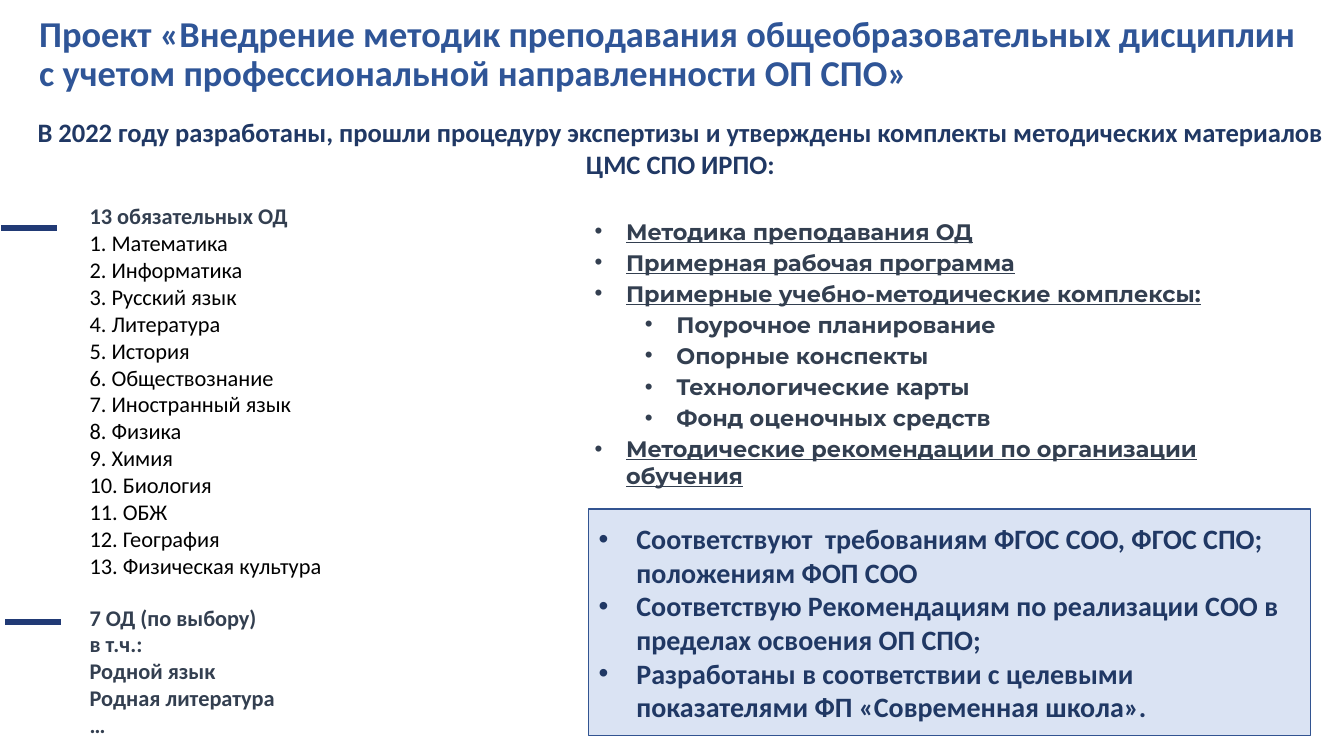
from lxml import etree
from pptx import Presentation
from pptx.dml.color import RGBColor
from pptx.enum.shapes import MSO_CONNECTOR, MSO_SHAPE
from pptx.enum.text import MSO_ANCHOR, PP_ALIGN
from pptx.oxml.ns import qn
from pptx.util import Pt

LEFT, CENTER = PP_ALIGN.LEFT, PP_ALIGN.CENTER
TOP, MIDDLE = MSO_ANCHOR.TOP, MSO_ANCHOR.MIDDLE
RECT, STRAIGHT = MSO_SHAPE.RECTANGLE, MSO_CONNECTOR.STRAIGHT

NAVY, SLATE, BLUE, BLACK = "203864", "333F50", "2F5597", "000000"

TITLE = ("Проект «Внедрение методик преподавания общеобразовательных дисциплин "
         "с учетом профессиональной направленности ОП СПО»")
LEAD = ("В 2022 году разработаны, прошли процедуру экспертизы и утверждены "
        "комплекты методических материалов ЦМС СПО ИРПО:")
SUBJECTS = ["Математика", "Информатика", "Русский язык", "Литература", "История",
            "Обществознание", "Иностранный язык", "Физика", "Химия", "Биология",
            "ОБЖ", "География", "Физическая культура"]
ELECTIVES = ["7 ОД (по выбору)", "в т.ч.:", "Родной язык", "Родная литература", "…"]
# (level, text)
MATERIALS = [
    (0, "Методика преподавания ОД"),
    (0, "Примерная рабочая программа"),
    (0, "Примерные учебно-методические комплексы:"),
    (1, "Поурочное планирование"),
    (1, "Опорные конспекты"),
    (1, "Технологические карты"),
    (1, "Фонд оценочных средств"),
    (0, "Методические рекомендации по организации обучения"),
]
COMPLIANCE = [
    "Соответствуют  требованиям ФГОС СОО, ФГОС СПО; положениям ФОП СОО",
    "Соответствую Рекомендациям по реализации СОО в пределах освоения ОП СПО;",
    "Разработаны в соответствии с целевыми показателями ФП «Современная школа».",
]


def rgb(color):
    return RGBColor.from_string(color)


def add_text_box(s, left, top, width, height):
    sp = s.shapes.add_textbox(Pt(left), Pt(top), Pt(width), Pt(height))
    sp.text_frame.word_wrap = True
    return sp.text_frame


def add_paragraph(tf, text, size, color, bold=True, font="Calibri",
                  underline=False, align=LEFT):
    first = tf.paragraphs[0]
    p = tf.add_paragraph() if first.runs else first
    p.alignment = align
    r = p.add_run()
    r.text = text
    r.font.name, r.font.size = font, Pt(size)
    r.font.bold, r.font.underline = bold, underline
    r.font.color.rgb = rgb(color)
    return p


def add_bullet(p, margin, hanging):
    pPr = p._p.get_or_add_pPr()
    pPr.set("marL", str(Pt(margin)))
    pPr.set("indent", str(-Pt(hanging)))
    etree.SubElement(pPr, qn("a:buFont")).set("typeface", "Arial")
    etree.SubElement(pPr, qn("a:buChar")).set("char", "•")


def add_dash(s, left, y):
    line = s.shapes.add_connector(STRAIGHT, Pt(left), Pt(y), Pt(left + 40), Pt(y))
    line.line.color.rgb = rgb("213A75")
    line.line.width = Pt(4.5)
    etree.SubElement(line._element.spPr, qn("a:effectLst"))


def add_panel(s, left, top, width, height):
    sp = s.shapes.add_shape(RECT, Pt(left), Pt(top), Pt(width), Pt(height))
    sp.shadow.inherit = False
    sp.fill.solid()
    sp.fill.fore_color.rgb = rgb("DAE3F3")
    sp.line.color.rgb = rgb("325491")
    sp.line.width = Pt(1)
    tf = sp.text_frame
    tf.word_wrap = True
    tf.vertical_anchor = MIDDLE
    return tf


def main():
    prs = Presentation()
    prs.slide_width, prs.slide_height = Pt(960), Pt(540)
    s = prs.slides.add_slide(prs.slide_layouts[6])

    # Title and lead sentence
    tf = add_text_box(s, 20.9, 7.9, 923, 63.4)
    tf.vertical_anchor = TOP
    add_paragraph(tf, TITLE, 26, BLUE).line_spacing = 0.9
    tf = add_text_box(s, 12.2, 79.2, 947.5, 53.3)
    add_paragraph(tf, LEAD, 19, NAVY, align=CENTER)

    # Compulsory subjects
    tf = add_text_box(s, 56.9, 141.1, 271.4, 278.6)
    add_paragraph(tf, f"{len(SUBJECTS)} обязательных ОД", 16, SLATE)
    for number, subject in enumerate(SUBJECTS, 1):
        add_paragraph(tf, f"{number}. {subject}", 16, BLACK, bold=False)

    # Elective subjects
    tf = add_text_box(s, 56.9, 427.7, 211.7, 104.4)
    for text in ELECTIVES:
        add_paragraph(tf, text, 16, SLATE)

    # Dashes beside the two subject lists
    add_dash(s, 0.7, 162.7)
    add_dash(s, 3.6, 444.2)

    # Teaching materials
    tf = add_text_box(s, 417.6, 151.9, 526.3, 203)
    for level, text in MATERIALS:
        p = add_paragraph(tf, text, 16, SLATE, font="Montserrat",
                          underline=level == 0)
        p.level = level
        p.space_after = Pt(3)
        add_bullet(p, 22.5 + 36 * level, 22.5)

    # Compliance panel
    tf = add_panel(s, 420.5, 363.6, 515.5, 162)
    for text in COMPLIANCE:
        add_bullet(add_paragraph(tf, text, 20, NAVY), 27, 27)

    prs.save("out.pptx")


if __name__ == "__main__":
    main()
